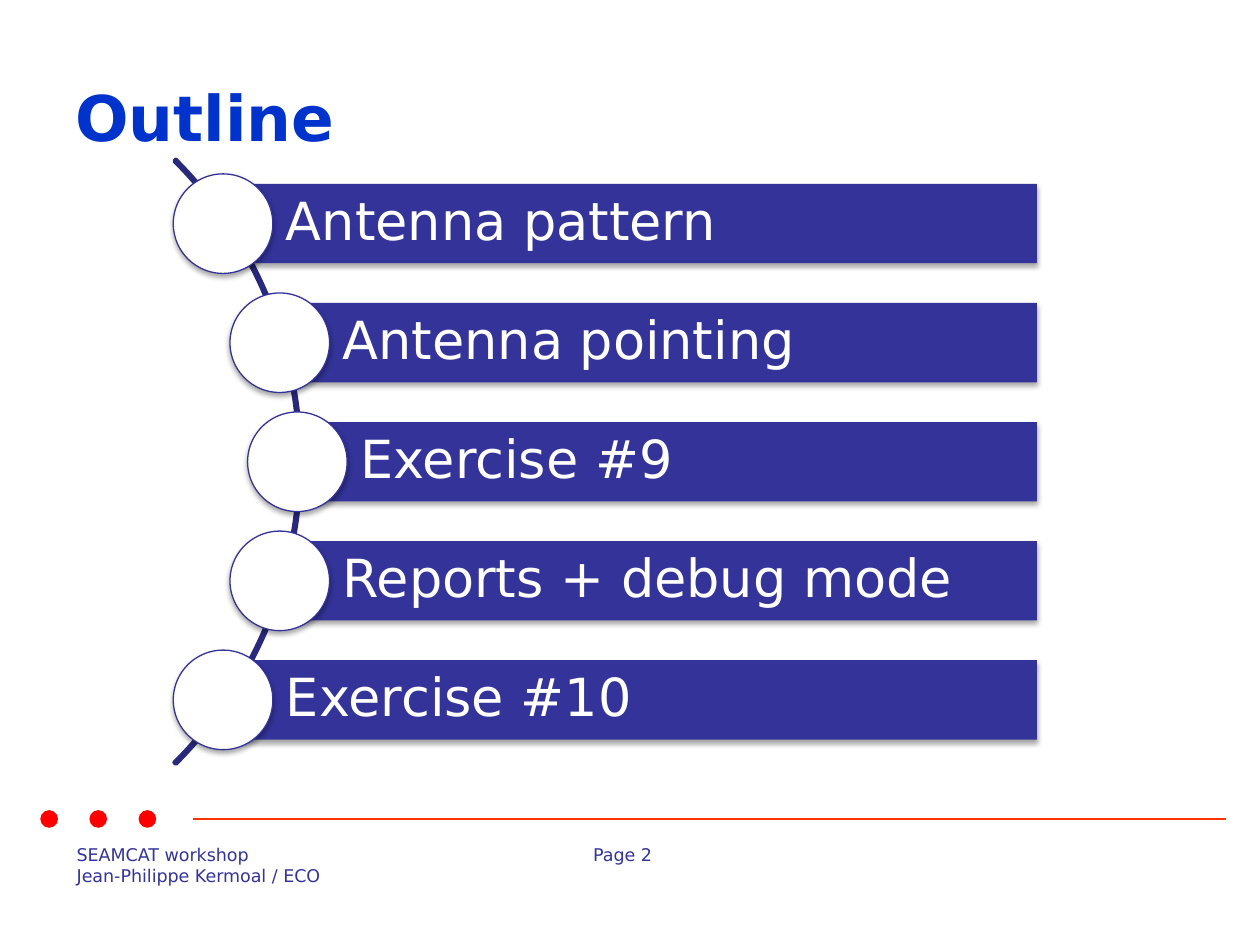
from dataclasses import dataclass

from lxml import etree
from pptx import Presentation
from pptx.dml.color import RGBColor
from pptx.enum.shapes import MSO_CONNECTOR as Link, MSO_SHAPE as Kind
from pptx.enum.text import MSO_ANCHOR as Anchor, PP_ALIGN as Align
from pptx.oxml import parse_xml
from pptx.oxml.ns import nsdecls, qn
from pptx.util import Inches, Pt


@dataclass(frozen=True)
class Theme:
    """Colours, font and type sizes of the slide."""
    font: str = "DejaVu Sans"
    title: str = "0033CC"
    bar: str = "333399"
    arc: str = "29297B"
    white: str = "FFFFFF"
    dot: str = "FF0000"
    rule: str = "FF3300"
    title_size: int = 36
    bar_size: int = 30
    foot_size: int = 10


THEME = Theme()
TOPICS = (
    ("Antenna pattern", 0),
    ("Antenna pointing", 0.45),
    ("Exercise #9", 0.59),
    ("Reports + debug mode", 0.45),
    ("Exercise #10", 0),
)


def style(frame, text, size, color, bold=False):
    """Fill a text frame and format all its runs."""
    frame.text = text
    for para in frame.paragraphs:
        para.alignment = Align.LEFT
        for run in para.runs:
            run.font.name = THEME.font
            run.font.size = Pt(size)
            run.font.bold = bold
            run.font.color.rgb = RGBColor.from_string(color)


def add_text(slide, box, text, size, color, bold=False, wrap=False):
    """Add a text box and return its frame."""
    frame = slide.shapes.add_textbox(*map(Inches, box)).text_frame
    frame.word_wrap = wrap
    style(frame, text, size, color, bold)
    return frame


def add_form(slide, kind, box, fill=None, line=None, width=0.75):
    """Add a flat preset shape with optional fill and outline."""
    form = slide.shapes.add_shape(kind, *map(Inches, box))
    form.shadow.inherit = False
    if fill:
        form.fill.solid()
        form.fill.fore_color.rgb = RGBColor.from_string(fill)
    else:
        form.fill.background()
    if line:
        form.line.color.rgb = RGBColor.from_string(line)
        form.line.width = Pt(width)
    else:
        form.line.fill.background()
    return form


def cast_shadow(form):
    """Give a shape a soft shadow below it."""
    effects = form.element.spPr.find(qn("a:effectLst"))
    effects.append(parse_xml(
        f'<a:outerShdw {nsdecls("a")} blurRad="{Pt(3.1)}" dist="{Pt(1.8)}" '
        'dir="5400000" rotWithShape="0"><a:srgbClr val="000000">'
        '<a:alpha val="35000"/></a:srgbClr></a:outerShdw>'))


def add_title(slide, box):
    """Place the slide title."""
    frame = add_text(slide, box, "Outline", THEME.title_size, THEME.title, True, True)
    frame.vertical_anchor = Anchor.MIDDLE


def add_topic(slide, box, text):
    """Place one topic bar with a disc centred on its left edge."""
    left, top, width, height = box
    bar = add_form(slide, Kind.RECTANGLE, box, THEME.bar)
    cast_shadow(bar)
    frame = bar.text_frame
    frame.word_wrap = True
    frame.vertical_anchor = Anchor.MIDDLE
    frame.margin_left = Inches(0.5)
    frame.margin_right = frame.margin_top = frame.margin_bottom = Inches(0.08)
    style(frame, text, THEME.bar_size, THEME.white)
    frame.paragraphs[0].line_spacing = 0.9
    size = 0.79
    disc = (left - size / 2, top + (height - size) / 2, size, size)
    cast_shadow(add_form(slide, Kind.OVAL, disc, THEME.white, THEME.bar))


def add_list(slide, box):
    """Place the arc and the topic bars that follow its curve."""
    left, top, width, height = box
    bar_high = 0.63
    step = (height - bar_high) / (len(TOPICS) - 1)
    span = 6.79
    ring = (left - 6.17, top + (height - span) / 2, span, span)
    arc = add_form(slide, Kind.BLOCK_ARC, ring, line=THEME.arc, width=2)
    for i, value in enumerate((189, 27, 0.003)):
        arc.adjustments[i] = value
    for i, (text, indent) in enumerate(TOPICS):
        add_topic(slide, (left + indent, top + i * step, width - indent, bar_high), text)


def add_footer(slide, box):
    """Place the dots, the rule and the footer texts."""
    left, top, width, height = box
    for i in range(3):
        add_form(slide, Kind.OVAL, (left + i * 0.39, top, 0.14, 0.14), THEME.dot)
    mid = Inches(top + 0.07)
    rule = slide.shapes.add_connector(
        Link.STRAIGHT, Inches(left + 1.21), mid, Inches(left + width), mid)
    rule.line.color.rgb = RGBColor.from_string(THEME.rule)
    rule.line.width = Pt(0.75)
    etree.SubElement(rule.element.spPr, qn("a:effectLst"))
    low = top + 0.22
    notes = (
        ((left + 0.19, low, 2.21, 0.43), "SEAMCAT workshop\nJean-Philippe Kermoal / ECO"),
        ((left + 4.29, low, 0.82, 0.27), "Page 2"),
    )
    for place, text in notes:
        add_text(slide, place, text, THEME.foot_size, THEME.bar)


def main():
    """Build and save the slide."""
    deck = Presentation()
    deck.slide_width, deck.slide_height = Inches(10), Inches(7.5)
    slide = deck.slides.add_slide(deck.slide_layouts[6])
    add_footer(slide, (0.32, 6.43, 9.41, 0.65))
    add_title(slide, (0.5, 0.3, 9, 1.25))
    add_list(slide, (1.77, 1.46, 6.46, 4.41))
    deck.save("out.pptx")


if __name__ == "__main__":
    main()
